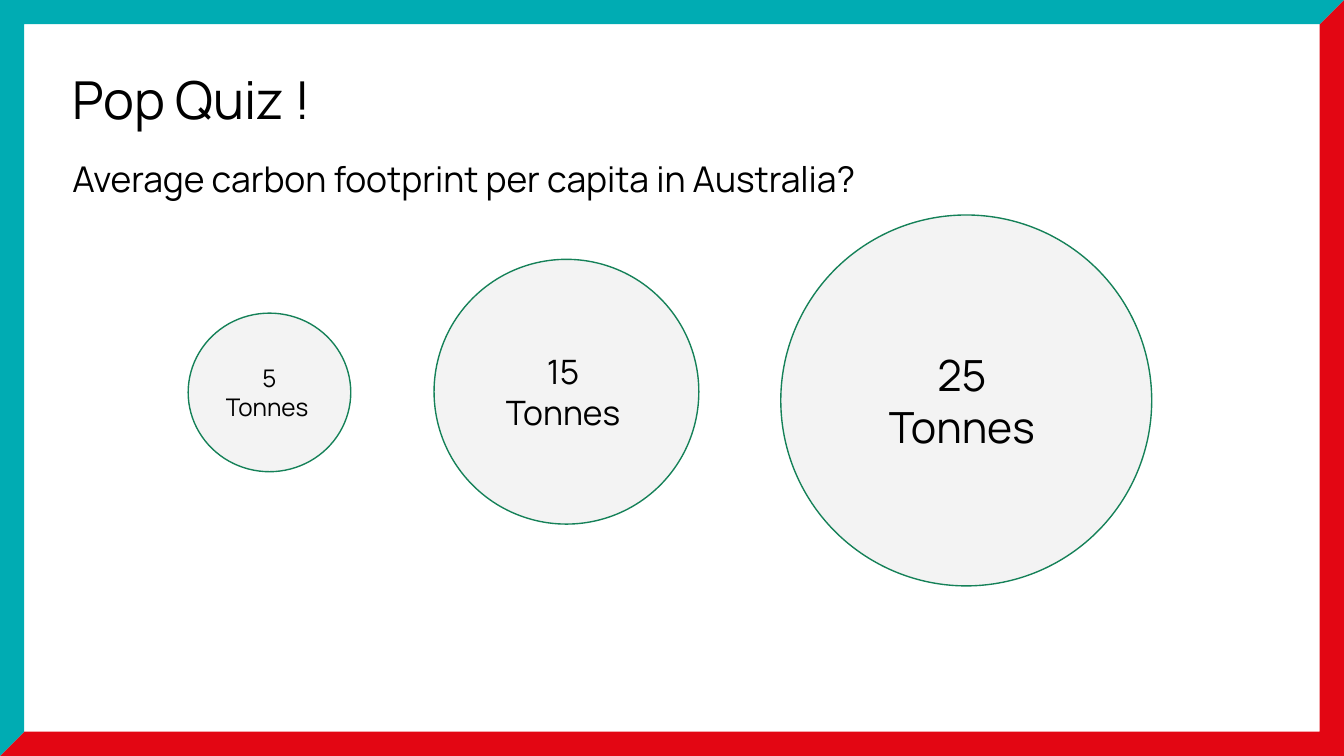
from dataclasses import dataclass

from pptx import Presentation
from pptx.dml.color import RGBColor
from pptx.enum.shapes import MSO_SHAPE
from pptx.enum.text import MSO_ANCHOR, PP_ALIGN
from pptx.util import Inches, Pt

OVAL = MSO_SHAPE.OVAL
MIDDLE = MSO_ANCHOR.MIDDLE
CENTER = PP_ALIGN.CENTER


@dataclass(frozen=True)
class Theme:
    font: str = "Manrope"
    text: RGBColor = RGBColor(0, 0, 0)
    teal: RGBColor = RGBColor(0x00, 0xAC, 0xB3)
    red: RGBColor = RGBColor(0xE3, 0x06, 0x13)
    bubble: RGBColor = RGBColor(0xF3, 0xF3, 0xF3)
    outline: RGBColor = RGBColor(0x15, 0x81, 0x58)
    outline_width: float = 0.75
    title_size: int = 28
    question_size: int = 19
    answer_sizes: tuple = (13, 18, 23)


theme = Theme()
WIDTH = Inches(10)
HEIGHT = WIDTH * 9 // 16
BORDER = Inches(0.18)
MARGIN = Inches(0.44)
PADDING = Inches(0.1)

deck = Presentation()
deck.slide_width = WIDTH
deck.slide_height = HEIGHT
page = deck.slides.add_slide(deck.slide_layouts[6])


def write_lines(shape, lines, size, align=None):
    frame = shape.text_frame
    frame.word_wrap = True
    frame.margin_left = frame.margin_right = PADDING
    frame.margin_top = frame.margin_bottom = PADDING
    frame.text = "\n".join(lines)
    for para in frame.paragraphs:
        para.alignment = align
        para.font.name = theme.font
        para.font.size = Pt(size)
        para.font.color.rgb = theme.text


# Frame: two L-shaped bands that meet in mitred corners
right, bottom = WIDTH - BORDER, HEIGHT - BORDER
mitre = [(BORDER, bottom), (0, HEIGHT)]
bands = [
    (theme.red, [(WIDTH, 0), (right, BORDER), (right, bottom), *mitre, (WIDTH, HEIGHT)]),
    (theme.teal, [(0, 0), (WIDTH, 0), (right, BORDER), (BORDER, BORDER), *mitre]),
]
for color, corners in bands:
    start, *others = corners
    builder = page.shapes.build_freeform(*start)
    builder.add_line_segments(others, close=True)
    band = builder.convert_to_shape()
    band.shadow.inherit = False
    band.fill.solid()
    band.fill.fore_color.rgb = color
    band.line.fill.background()

# Title and question
headings = [
    ("Pop Quiz !", theme.title_size, 0.4, 4.64, 0.67),
    ("Average carbon footprint per capita in Australia?", theme.question_size, 1.07, 8.84, 0.52),
]
for text, size, *place in headings:
    box = page.shapes.add_textbox(MARGIN, *map(Inches, place))
    write_lines(box, [text], size)

# Answers: bubbles that grow with the number of tonnes
answers = [
    (["5 Tonnes "], 1.4, 2.33, 1.21, 1.18),
    (["15 ", "Tonnes "], 3.23, 1.93, 1.97, 1.97),
    (["25 ", "Tonnes "], 5.81, 1.6, 2.76, 2.76),
]
for (lines, *place), size in zip(answers, theme.answer_sizes):
    bubble = page.shapes.add_shape(OVAL, *map(Inches, place))
    bubble.shadow.inherit = False
    bubble.fill.solid()
    bubble.fill.fore_color.rgb = theme.bubble
    bubble.line.color.rgb = theme.outline
    bubble.line.width = Pt(theme.outline_width)
    bubble.text_frame.vertical_anchor = MIDDLE
    write_lines(bubble, lines, size, CENTER)

deck.save("out.pptx")
